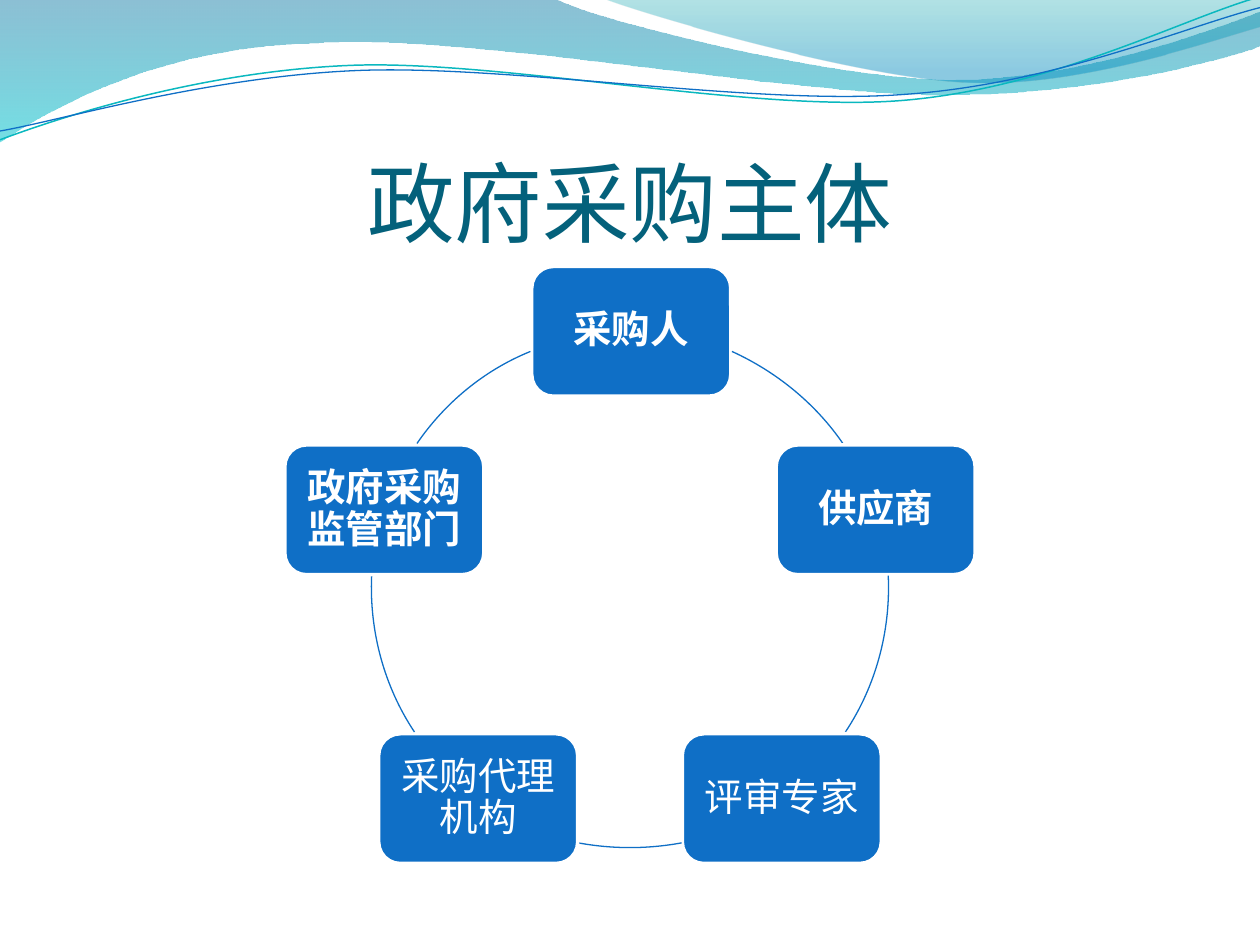
from math import cos, radians, sin

from lxml.etree import SubElement
from pptx import Presentation
from pptx.dml.color import RGBColor
from pptx.enum.shapes import MSO_SHAPE
from pptx.enum.text import MSO_ANCHOR, MSO_AUTO_SIZE, PP_ALIGN
from pptx.oxml.ns import qn
from pptx.util import Inches, Pt

WIDTH, HEIGHT = Inches(10), Inches(7.5)
BLUE, TEAL, TITLE_COLOR, WHITE = "0F6FC6", "0AB8BF", "04617B", "FFFFFF"
WAVE_ROTATION = -2.7

BANDS = [
    (
        (-0.01, -0.01, 10.02, 1.14),
        [
            [(0, 0)], [(4.4, -0.01)],
            [(4.76, 0.17), (6.64, 0.63), (7.58, 0.63)],
            [(8.53, 0.63), (9.58, 0.26), (10, 0.09)],
            [(10.01, 0.36)],
            [(9.83, 0.44), (8.7, 0.76), (7.46, 0.75)],
            [(6.22, 0.75), (3.82, 0.28), (2.57, 0.34)],
            [(1.29, 0.36), (0.46, 0.83), (-0.01, 1.13)],
            [(0, 0)],
        ],
        [(0, "0074A1", 45), (1, "00C6CF", 55)],
    ),
    (
        (4.79, -0.01, 5.21, 0.7),
        [
            [(4.79, -0.01)],
            [(5.09, 0.11), (6.82, 0.62), (7.69, 0.65)],
            [(8.56, 0.69), (9.61, 0.32), (10, 0.21)],
            [(10, 0)], [(4.79, -0.01)],
        ],
        [(0, "00A1A9", 30), (0.8, "008BBF", 45)],
    ),
]
WAVES = [
    (
        (-0.02, 0.22, 10.02, 0.71),
        [
            [(0, 1.11)],
            [(0.48, 0.93), (1.58, 0.57), (2.77, 0.52)],
            [(3.95, 0.47), (5.93, 0.89), (7.13, 0.8)],
            [(8.33, 0.71), (9.38, 0.15), (9.98, -0.02)],
        ],
        TEAL, 0.85,
    ),
    (
        (-0.02, 0.3, 10.03, 0.58),
        [
            [(0, 1.04)],
            [(0.47, 0.96), (1.64, 0.61), (2.83, 0.56)],
            [(4.03, 0.51), (5.97, 0.84), (7.17, 0.75)],
            [(8.36, 0.67), (9.41, 0.21), (10, 0.06)],
        ],
        BLUE, 0.75,
    ),
]
NODES = [
    ("采购人", True, 0.01),
    ("供应商", True, 0),
    ("评审专家", False, 0),
    ("采购代理机构", False, 0),
    ("政府采购监管部门", True, 0),
]
ARCS = [
    [[(5.81, 2.79)], [(6.16, 2.95), (6.47, 3.2), (6.69, 3.52)]],
    [[(7.05, 4.57)], [(7.07, 5.01), (6.95, 5.45), (6.71, 5.81)]],
    [[(5.41, 6.69)], [(5.14, 6.74), (4.86, 6.74), (4.59, 6.69)]],
    [[(3.29, 5.81)], [(3.05, 5.45), (2.93, 5.01), (2.95, 4.57)]],
    [[(3.31, 3.52)], [(3.53, 3.2), (3.84, 2.94), (4.21, 2.79)]],
]


def color(value):
    return RGBColor.from_string(value)


def set_line(shape, value, points):
    shape.line.color.rgb = color(value)
    shape.line.width = Pt(points)


def local_point(point, box, rotation):
    left, top, width, height = box
    x, y = point[0] - left - width / 2, point[1] - top - height / 2
    turn = radians(-rotation)
    return (
        Inches(x * cos(turn) - y * sin(turn) + width / 2),
        Inches(x * sin(turn) + y * cos(turn) + height / 2),
    )


def add_curve(slide, box, segments, close=False, rotation=0):
    builder = slide.shapes.build_freeform(0, 0)
    builder.add_line_segments([(Inches(box[2]), Inches(box[3]))], close=False)
    shape = builder.convert_to_shape()
    shape.left, shape.top, shape.width, shape.height = map(Inches, box)
    shape.rotation = rotation
    shape.shadow.inherit = False
    outline = next(shape.element.iter(qn("a:path")))
    for command in list(outline):
        outline.remove(command)
    for index, segment in enumerate(segments):
        kind = "a:moveTo" if index == 0 else "a:lnTo" if len(segment) == 1 else "a:cubicBezTo"
        command = SubElement(outline, qn(kind))
        for point in segment:
            x, y = local_point(point, box, rotation)
            SubElement(command, qn("a:pt"), x=str(x), y=str(y))
    if close:
        SubElement(outline, qn("a:close"))
    return shape


def add_open_curve(slide, box, segments, value, points, rotation=0):
    curve = add_curve(slide, box, segments, rotation=rotation)
    curve.fill.background()
    set_line(curve, value, points)


def add_header(slide):
    for box, segments, stops in BANDS:
        band = add_curve(slide, box, segments, close=True)
        band.line.fill.background()
        band.fill.gradient()
        band.fill.gradient_angle = 270
        for stop, (position, value, opacity) in zip(band.fill.gradient_stops, stops):
            stop.position = position
            stop.color.rgb = color(value)
        fill_colors = band.element.spPr.iter(qn("a:srgbClr"))
        for fill_color, (position, value, opacity) in zip(fill_colors, stops):
            SubElement(fill_color, qn("a:alpha"), val=str(opacity * 1000))
    for box, segments, value, points in WAVES:
        add_open_curve(slide, box, segments, value, points, WAVE_ROTATION)


def write_text(shape, text, font_name, size, value, bold, anchor):
    frame = shape.text_frame
    frame.word_wrap = True
    frame.auto_size = MSO_AUTO_SIZE.NONE
    frame.vertical_anchor = anchor
    paragraph = frame.paragraphs[0]
    paragraph.alignment = PP_ALIGN.CENTER
    run = paragraph.add_run()
    run.text = text
    run.font.name = font_name
    run.font.size = Pt(size)
    run.font.bold = bold
    run.font.color.rgb = color(value)
    return paragraph


def add_title(slide, left, top, width, height):
    title = slide.shapes.title
    title.left, title.top, title.width, title.height = left, top, width, height
    frame = title.text_frame
    frame.margin_left = frame.margin_right = frame.margin_bottom = 0
    frame.margin_top = Inches(0.05)
    write_text(title, "政府采购主体", "Calibri", 50, TITLE_COLOR, False, MSO_ANCHOR.BOTTOM)


def add_node(slide, text, bold, center_x, center_y, width, height):
    node = slide.shapes.add_shape(
        MSO_SHAPE.ROUNDED_RECTANGLE,
        Inches(center_x - width / 2), Inches(center_y - height / 2),
        Inches(width), Inches(height),
    )
    node.shadow.inherit = False
    node.fill.solid()
    node.fill.fore_color.rgb = color(BLUE)
    set_line(node, WHITE, 2)
    frame = node.text_frame
    frame.margin_left = frame.margin_right = Inches(0.04)
    frame.margin_top = frame.margin_bottom = Inches(0.04)
    paragraph = write_text(node, text, "TeX Gyre Pagella", 22, WHITE, bold, MSO_ANCHOR.MIDDLE)
    paragraph.line_spacing = 0.9


def add_cycle(slide, left, top, diameter):
    radius = diameter / 2
    box = (left, top, diameter, diameter)
    for index, ((text, bold, shift), arc) in enumerate(zip(NODES, ARCS)):
        direction = radians(index * 360 / len(NODES) - 90)
        center_x = left + radius * (1 + cos(direction)) + shift
        center_y = top + radius * (1 + sin(direction))
        add_node(slide, text, bold, center_x, center_y, 1.58, 1.03)
        add_open_curve(slide, box, arc, BLUE, 0.75)


def main():
    presentation = Presentation()
    presentation.slide_width, presentation.slide_height = WIDTH, HEIGHT
    slide = presentation.slides.add_slide(presentation.slide_layouts[5])
    slide.background.fill.solid()
    slide.background.fill.fore_color.rgb = color(WHITE)
    add_header(slide)
    add_title(slide, int(WIDTH * 0.05), Inches(0.77), int(WIDTH * 0.9), Inches(1.25))
    add_cycle(slide, 2.95, 2.63, 4.1)
    presentation.save("out.pptx")


if __name__ == "__main__":
    main()
